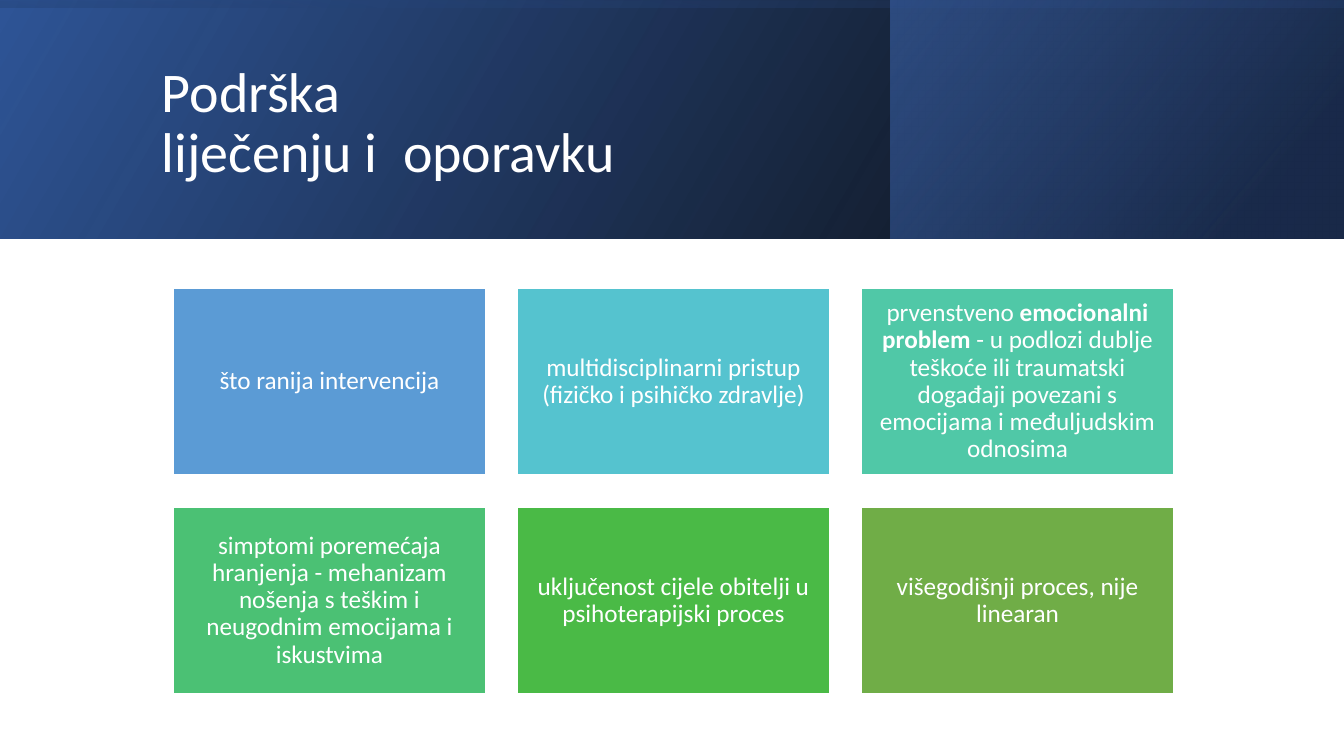
from lxml import etree
from pptx import Presentation
from pptx import util as u
from pptx.dml.color import RGBColor
from pptx.enum import shapes, text
from pptx.oxml.ns import qn

FONT = "Calibri"
WHITE = "FFFFFF"
BAND_W, BAND_H = 1344, 239

# Card grid
COLUMNS = 3
GRID_LEFT, GRID_TOP = 173, 288
CARD_W, CARD_H = 313, 187
PITCH_X, PITCH_Y = 344, 219

# Fill and text parts; every second part is bold
CARDS = [
    ("5B9BD5", ["što ranija intervencija"]),
    ("55C3CF", ["multidisciplinarni pristup (fizičko i psihičko zdravlje)"]),
    ("50C8A7", ["prvenstveno ", "emocionalni problem ",
                "- u podlozi dublje teškoće ili traumatski događaji "
                "povezani s emocijama i međuljudskim odnosima"]),
    ("4BC174", ["simptomi poremećaja hranjenja - mehanizam nošenja "
                "s teškim i neugodnim emocijama i iskustvima"]),
    ("4ABA46", ["uključenost cijele obitelji u psihoterapijski proces"]),
    ("70AD47", ["višegodišnji proces, nije linearan"]),
]


def px(length):
    return u.Emu(round(length * 914400 / 100.8))


def color(value):
    return RGBColor.from_string(value)


def add_rect(slide, left, top, width, height):
    rect = slide.shapes.add_shape(
        shapes.MSO_SHAPE.RECTANGLE, px(left), px(top), px(width), px(height))
    rect.shadow.inherit = False
    return rect


def add_gradient_panel(slide, box, stops, angle, rotation=0):
    """Mirrored panel; each stop is position %, colour, opacity %."""
    panel = add_rect(slide, *box)
    panel.rotation = rotation
    panel.line.fill.background()
    panel.fill.gradient()
    properties = panel._element.spPr
    properties.find(qn("a:xfrm")).set("flipH", "1")

    gradient = properties.find(qn("a:gradFill"))
    for child in list(gradient):
        gradient.remove(child)
    gradient.set("rotWithShape", "1")
    stop_list = etree.SubElement(gradient, qn("a:gsLst"))
    for position, value, opacity in stops:
        stop = etree.SubElement(stop_list, qn("a:gs"), pos=str(position * 1000))
        shade = etree.SubElement(stop, qn("a:srgbClr"), val=value)
        etree.SubElement(shade, qn("a:alpha"), val=str(opacity * 1000))
    etree.SubElement(gradient, qn("a:lin"), ang=str(angle * 60000), scaled="0")


def format_runs(paragraph, size):
    paragraph.line_spacing = 0.9
    for run in paragraph.runs:
        run.font.name = FONT
        run.font.size = u.Pt(size)
        run.font.color.rgb = color(WHITE)


def add_title(slide, wording):
    title = slide.shapes.add_textbox(px(152), px(38), px(1072), px(173))
    frame = title.text_frame
    frame.word_wrap = True
    frame.vertical_anchor = text.MSO_ANCHOR.MIDDLE
    paragraph = frame.paragraphs[0]
    paragraph.text = wording
    format_runs(paragraph, 40)


def add_card(slide, left, top, fill, parts):
    card = add_rect(slide, left, top, CARD_W, CARD_H)
    card.fill.solid()
    card.fill.fore_color.rgb = color(fill)
    card.line.color.rgb = color(WHITE)
    card.line.width = u.Pt(1)

    frame = card.text_frame
    frame.word_wrap = True
    frame.vertical_anchor = text.MSO_ANCHOR.MIDDLE
    frame.margin_left = frame.margin_right = px(7)
    frame.margin_top = frame.margin_bottom = px(7)
    paragraph = frame.paragraphs[0]
    paragraph.alignment = text.PP_ALIGN.CENTER
    for index, part in enumerate(parts):
        run = paragraph.add_run()
        run.text = part
        run.font.bold = index % 2 == 1
    format_runs(paragraph, 18)


def main():
    deck = Presentation()
    deck.slide_width, deck.slide_height = px(1344), px(756)
    slide = deck.slides.add_slide(deck.slide_layouts[6])

    # Header band: base, right panel and a quarter-turned overlay
    add_gradient_panel(slide, (0, 0, BAND_W, BAND_H),
                       [(0, "000000", 96), (100, "2F5597", 100)], 330)
    add_gradient_panel(slide, (891, 0, 452, BAND_H),
                       [(19, "203864", 68), (100, "4472C4", 48)], 320)
    offset = (BAND_W - BAND_H) // 2
    add_gradient_panel(slide, (offset, -offset, BAND_H, BAND_W),
                       [(23, "2F5597", 16), (99, "000000", 45)], 350, 270)
    add_title(slide, "Podrška\vliječenju i  oporavku ")

    # Cards, row by row
    for index, (fill, parts) in enumerate(CARDS):
        row, column = divmod(index, COLUMNS)
        add_card(slide, GRID_LEFT + column * PITCH_X,
                 GRID_TOP + row * PITCH_Y, fill, parts)

    deck.save("out.pptx")


if __name__ == "__main__":
    main()
